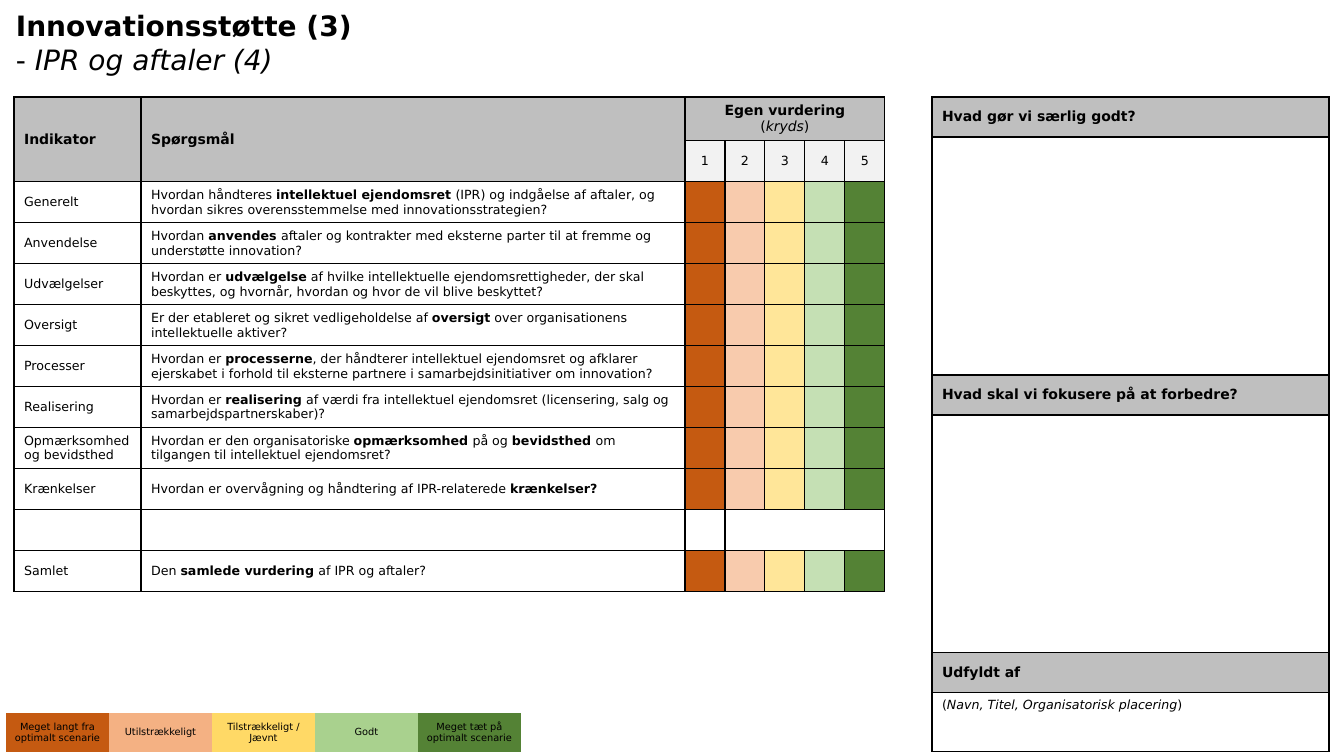
from lxml.etree import SubElement
from pptx import Presentation
from pptx.dml.color import RGBColor
from pptx.enum.text import MSO_ANCHOR, PP_ALIGN
from pptx.oxml.ns import qn
from pptx.util import Emu, Pt

FONT = "DejaVu Sans"
BLACK, GRAY, PALE = "000000", "BFBFBF", "F2F2F2"
NO_STYLE = "{2D5ABB26-0587-4C30-8999-92F81FD0307C}"
SCORE_COLORS = ["C55A11", "F8CBAD", "FFE699", "C5E0B4", "548235"]

# PLACEHOLDER
TITLE = "*Innovationsstøtte (3)*\n- _IPR og aftaler (4)_"
SCORE_HEADING = "*Egen vurdering*\n(_kryds_)"
QUESTIONS = [
    ("Generelt", "Hvordan håndteres *intellektuel ejendomsret *(IPR) og indgåelse af aftaler, "
     "og hvordan sikres overensstemmelse med innovationsstrategien?"),
    ("Anvendelse", "Hvordan *anvendes *aftaler og kontrakter med eksterne parter til at fremme "
     "og understøtte innovation?"),
    ("Udvælgelser", "Hvordan er *udvælgelse* af hvilke intellektuelle ejendomsrettigheder, der skal "
     "beskyttes, og hvornår, hvordan og hvor de vil blive beskyttet?"),
    ("Oversigt", "Er der etableret og sikret vedligeholdelse af *oversigt* over organisationens "
     "intellektuelle aktiver?"),
    ("Processer", "Hvordan er *processerne*, der håndterer intellektuel ejendomsret og afklarer "
     "ejerskabet i forhold til eksterne partnere i samarbejdsinitiativer om innovation?"),
    ("Realisering", "Hvordan er *realisering *af værdi fra intellektuel ejendomsret (licensering, "
     "salg og samarbejdspartnerskaber)?"),
    ("Opmærksomhed og bevidsthed", "Hvordan er den organisatoriske *opmærksomhed *på og "
     "*bevidsthed *om tilgangen til intellektuel ejendomsret?"),
    ("Krænkelser", "Hvordan er overvågning og håndtering af IPR-relaterede *krænkelser?*"),
    ("", ""),
    ("Samlet", "Den *samlede vurdering *af IPR og aftaler?"),
]
NOTES = [
    ("*Hvad gør vi særlig godt?*", 40, GRAY),
    ("", 238, None),
    ("*Hvad skal vi fokusere på at forbedre?*", 40, GRAY),
    ("", 238, None),
    ("*Udfyldt af*", 40, GRAY),
    ("(_Navn, Titel, Organisatorisk placering_)", 59, None),
]
LEGEND = [
    ("Meget langt fra optimalt scenarie", "C55A11"),
    ("Utilstrækkeligt", "F4B183"),
    ("Tilstrækkeligt / Jævnt", "FFD966"),
    ("Godt", "A9D18E"),
    ("Meget tæt på optimalt scenarie", "548235"),
]


def px(length):
    return Emu(round(length * 914400 / 100.8))


def color(value):
    return RGBColor.from_string(value)


def write(frame, text, size=9, align=PP_ALIGN.LEFT):
    bold = italic = False
    for index, line in enumerate(text.split("\n")):
        para = frame.add_paragraph() if index else frame.paragraphs[0]
        para.alignment = align
        para.font.size = Pt(size)
        for part in line.replace("*", "|*|").replace("_", "|_|").split("|"):
            if part == "*":
                bold = not bold
            elif part == "_":
                italic = not italic
            elif part:
                span = para.add_run()
                span.text = part
                span.font.name = FONT
                span.font.size = Pt(size)
                span.font.bold = bold
                span.font.italic = italic
                span.font.color.rgb = color(BLACK)


def add_grid(page, left, top, widths, heights):
    frame = page.shapes.add_table(len(heights), len(widths), px(left), px(top),
                                  px(sum(widths)), px(sum(heights)))
    grid = frame.table
    grid.first_row = grid.horz_banding = False
    frame._element.find(".//" + qn("a:tableStyleId")).text = NO_STYLE
    for column, width in zip(grid.columns, widths):
        column.width = px(width)
    for row, height in zip(grid.rows, heights):
        row.height = px(height)
    return grid


def format_cell(cell, text="", fill=None, sides="LRTB", anchor=MSO_ANCHOR.MIDDLE, **style):
    properties = cell._tc.get_or_add_tcPr()
    for side in sides:
        line = SubElement(properties, qn("a:ln" + side), w=str(Pt(1)))
        SubElement(SubElement(line, qn("a:solidFill")), qn("a:srgbClr"), val=BLACK)
    if fill:
        cell.fill.solid()
        cell.fill.fore_color.rgb = color(fill)
    else:
        cell.fill.background()
    cell.vertical_anchor = anchor
    write(cell.text_frame, text, **style)


def add_questions(page):
    grid = add_grid(page, 14, 97, [127, 544] + [40] * 5, [43] + [41] * 11)
    for column, heading in enumerate(["*Indikator*", "*Spørgsmål*"]):
        grid.cell(0, column).merge(grid.cell(1, column))
        format_cell(grid.cell(0, column), heading, GRAY, size=10)
        format_cell(grid.cell(1, column), fill=GRAY)
    grid.cell(0, 2).merge(grid.cell(0, 6))
    for index in range(5):
        format_cell(grid.cell(0, index + 2), "" if index else SCORE_HEADING, GRAY,
                    size=10, align=PP_ALIGN.CENTER)
        format_cell(grid.cell(1, index + 2), str(index + 1), PALE, align=PP_ALIGN.CENTER)
    for row, (indicator, question) in enumerate(QUESTIONS, 2):
        format_cell(grid.cell(row, 0), indicator)
        format_cell(grid.cell(row, 1), question)
        for index, fill in enumerate(SCORE_COLORS):
            if indicator:
                format_cell(grid.cell(row, index + 2), fill=fill)
            else:
                outer = {0: "LTB", 4: "RTB"}.get(index, "TB")
                format_cell(grid.cell(row, index + 2), sides=outer)


def add_notes(page):
    grid = add_grid(page, 932, 97, [397], [height for _, height, _ in NOTES])
    for row, (text, _, fill) in enumerate(NOTES):
        format_cell(grid.cell(row, 0), text, fill, size=10 if fill else 9,
                    anchor=MSO_ANCHOR.MIDDLE if fill else MSO_ANCHOR.TOP)


def add_legend(page):
    grid = add_grid(page, 6, 713, [103] * len(LEGEND), [39])
    for column, (text, fill) in enumerate(LEGEND):
        cell = grid.cell(0, column)
        format_cell(cell, text, fill, sides="", size=7, align=PP_ALIGN.CENTER)
        cell.margin_left = cell.margin_right = px(7)
        cell.margin_top = cell.margin_bottom = 0


def main():
    deck = Presentation()
    deck.slide_width, deck.slide_height = px(1344), px(756)
    page = deck.slides.add_slide(deck.slide_layouts[6])
    box = page.shapes.add_textbox(px(6), px(4), px(1000), px(78))
    box.text_frame.word_wrap = True
    write(box.text_frame, TITLE, size=20)
    add_questions(page)
    add_notes(page)
    add_legend(page)
    deck.save("out.pptx")


if __name__ == "__main__":
    main()
